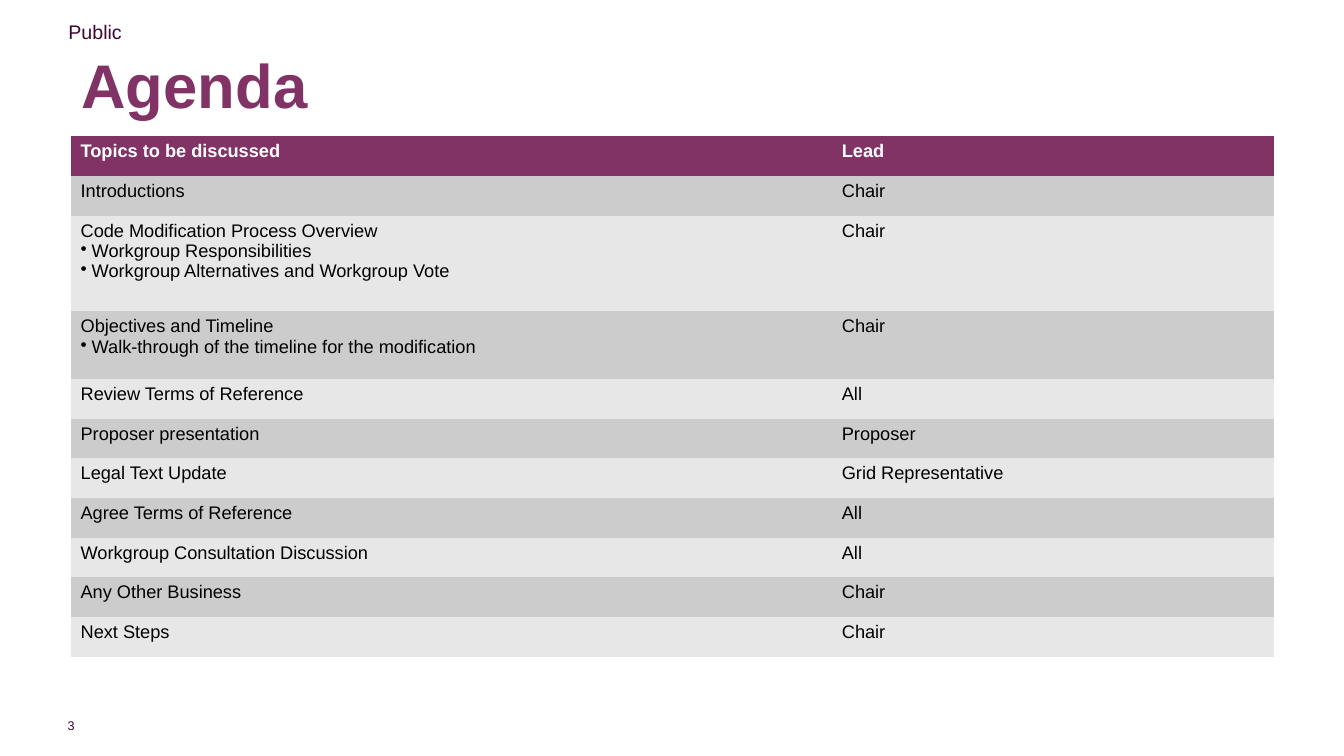
"""Build the agenda slide of a workgroup meeting."""
import pptx
import pptx.dml.color
import pptx.enum.text
import pptx.oxml.ns
import pptx.util
from lxml import etree

COLOURS = {"plum": "813366", "dark": "3F0731", "white": "FFFFFF",
           "black": "000000", "odd": "CCCCCC", "even": "E7E7E7"}
FONT = "Arial"
HEADER = ("Topics to be discussed", "Lead")
AGENDA = [
    ("Introductions", [], "Chair"),
    ("Code Modification Process Overview",
     ["Workgroup Responsibilities", "Workgroup Alternatives and Workgroup Vote"], "Chair"),
    ("Objectives and Timeline",
     ["Walk-through of the timeline for the modification"], "Chair"),
    ("Review Terms of Reference", [], "All"),
    ("Proposer presentation", [], "Proposer"),
    ("Legal Text Update", [], "Grid Representative"),
    ("Agree Terms of Reference", [], "All"),
    ("Workgroup Consultation Discussion", [], "All"),
    ("Any Other Business", [], "Chair"),
    ("Next Steps", [], "Chair"),
]
TABLE_LEFT, TABLE_TOP, TABLE_HEIGHT = 0.7, 1.35, 5.17
COLUMN_WIDTHS = (7.55, 4.39)
TALL_ROWS = {2: 0.95, 3: 0.67}
BULLET_INDENT = 0.11
PLAIN_STYLE = "{2D5ABB26-0587-4C30-8999-92F81FD0307C}"


def inches(*lengths):
    return [pptx.util.Inches(length) for length in lengths]


def colour(name):
    return pptx.dml.color.RGBColor.from_string(COLOURS[name])


def format_para(para, size, shade, bold=False):
    for span in para.runs:
        span.font.name = FONT
        span.font.size = pptx.util.Pt(size)
        span.font.bold = bold
        span.font.color.rgb = colour(shade)


def add_text(page, place, text, size, shade, bold=False, middle=False):
    box = page.shapes.add_textbox(*inches(*place))
    frame = box.text_frame
    frame.word_wrap = True
    if middle:
        frame.vertical_anchor = pptx.enum.text.MSO_ANCHOR.MIDDLE
    frame.text = text
    format_para(frame.paragraphs[0], size, shade, bold)
    return frame


def add_bullet(para):
    properties = para._p.get_or_add_pPr()
    indent = pptx.util.Inches(BULLET_INDENT)
    properties.set("marL", str(indent))
    properties.set("indent", str(-indent))
    bullet = etree.SubElement(properties, pptx.oxml.ns.qn("a:buChar"))
    bullet.set("char", "•")


def fill_cell(cell, text, bullets, fill, shade, bold):
    cell.fill.solid()
    cell.fill.fore_color.rgb = colour(fill)
    frame = cell.text_frame
    frame.text = text
    for bullet in bullets:
        para = frame.add_paragraph()
        para.text = bullet
        add_bullet(para)
    for para in frame.paragraphs:
        format_para(para, 13, shade, bold)


def add_agenda(page):
    rows = [(HEADER[0], [], HEADER[1])] + AGENDA
    place = inches(TABLE_LEFT, TABLE_TOP, sum(COLUMN_WIDTHS), TABLE_HEIGHT)
    table = page.shapes.add_table(len(rows), len(COLUMN_WIDTHS), *place).table
    table._tbl.tblPr.find(pptx.oxml.ns.qn("a:tableStyleId")).text = PLAIN_STYLE
    for column, width in zip(table.columns, COLUMN_WIDTHS):
        column.width = pptx.util.Inches(width)
    row_height = (TABLE_HEIGHT - sum(TALL_ROWS.values())) / (len(rows) - len(TALL_ROWS))
    for index, (topic, bullets, lead) in enumerate(rows):
        table.rows[index].height = pptx.util.Inches(TALL_ROWS.get(index, row_height))
        header = index == 0
        fill = "plum" if header else ("even", "odd")[index % 2]
        shade = "white" if header else "black"
        fill_cell(table.cell(index, 0), topic, bullets, fill, shade, header)
        fill_cell(table.cell(index, 1), lead, [], fill, shade, header)


def main():
    deck = pptx.Presentation()
    deck.slide_width, deck.slide_height = inches(13.33, 7.5)
    page = deck.slides.add_slide(deck.slide_layouts[6])
    number = add_text(page, (0.59, 7.12, 0.15, 0.15), "3", 9, "dark", middle=True)
    number.margin_left = number.margin_right = number.margin_top = number.margin_bottom = 0
    number.word_wrap = False
    number.paragraphs[0].alignment = pptx.enum.text.PP_ALIGN.RIGHT
    add_text(page, (0.58, 0.15, 5, 0.34), "Public", 14, "dark")
    title = add_text(page, (0.71, 0.4, 10.61, 0.95), "Agenda", 44, "plum", bold=True, middle=True)
    title.paragraphs[0].line_spacing = 0.9
    add_agenda(page)
    deck.save("out.pptx")


if __name__ == "__main__":
    main()
